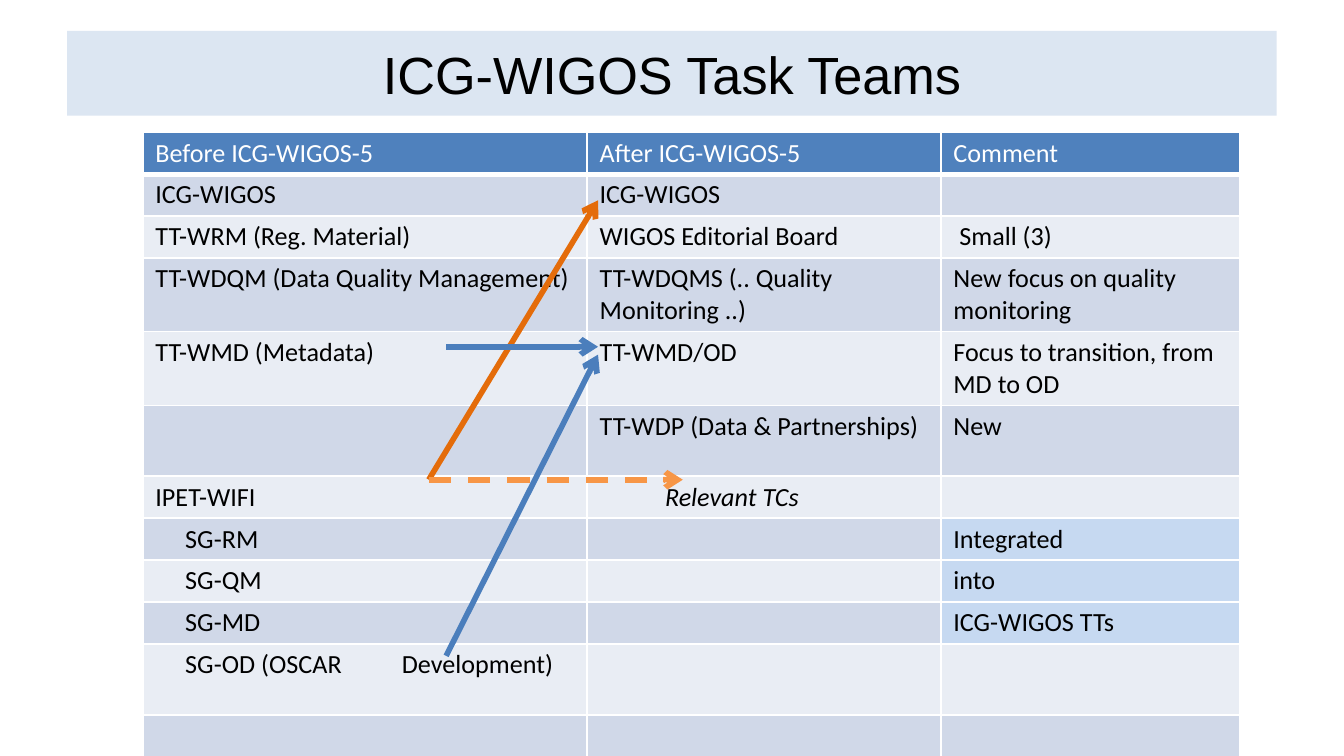
from dataclasses import dataclass

from lxml.etree import SubElement
from pptx import Presentation
from pptx.dml.color import RGBColor
from pptx.enum.dml import MSO_LINE
from pptx.enum.shapes import MSO_CONNECTOR
from pptx.enum.text import MSO_ANCHOR, MSO_AUTO_SIZE, PP_ALIGN
from pptx.oxml.ns import qn
from pptx.util import Pt


@dataclass(frozen=True)
class Theme:
    """Colours, fonts and type sizes of the slide."""
    title_font: str = "Arial"
    body_font: str = "Calibri"
    title_size: int = 28
    body_size: int = 14
    text: str = "000000"
    white: str = "FFFFFF"
    title_fill: str = "DCE6F2"
    header: str = "4F81BD"
    bands: tuple = ("D0D8E8", "E9EDF4")
    highlight: str = "C6D9F1"
    blue: str = "4B7EBC"
    orange: str = "E46C0A"
    light_orange: str = "F79646"


@dataclass(frozen=True)
class Cell:
    """Table cell text with its optional indent, tab stop, italics and fill."""
    text: str = ""
    indent: float = 0
    tab: float = 0
    italic: bool = False
    fill: str = ""


class Deck:
    """Theme and current slide, with a method for each kind of element."""

    def __init__(self, prs, theme):
        self.theme = theme
        self.s = prs.slides.add_slide(prs.slide_layouts[5])

    def style(self, p, size, color, font):
        """Set the type of a whole paragraph."""
        p.font.size = Pt(size)
        p.font.name = font
        p.font.color.rgb = RGBColor.from_string(color)

    def title(self, text, x, y, w, h):
        """Fill and format the title placeholder."""
        sp = self.s.shapes.title
        sp.left, sp.top, sp.width, sp.height = Pt(x), Pt(y), Pt(w), Pt(h)
        sp.fill.solid()
        sp.fill.fore_color.rgb = RGBColor.from_string(self.theme.title_fill)
        tf = sp.text_frame
        tf.text = text
        tf.auto_size = MSO_AUTO_SIZE.NONE
        tf.vertical_anchor = MSO_ANCHOR.MIDDLE
        p = tf.paragraphs[0]
        p.alignment = PP_ALIGN.CENTER
        self.style(p, self.theme.title_size, self.theme.text, self.theme.title_font)

    def borders(self, cell, bottom):
        """Draw white borders around a cell."""
        tc_pr = cell._tc.get_or_add_tcPr()
        for side, width in (("L", 1), ("R", 1), ("T", 1), ("B", bottom)):
            ln = SubElement(tc_pr, qn(f"a:ln{side}"), w=str(Pt(width)))
            fill = SubElement(ln, qn("a:solidFill"))
            SubElement(fill, qn("a:srgbClr"), val=self.theme.white)

    def cell(self, cell, item, fill, color, bottom):
        """Write and format one table cell."""
        cell.margin_left = cell.margin_right = Pt(6.75)
        cell.margin_top = cell.margin_bottom = Pt(2.7)
        self.borders(cell, bottom)
        cell.fill.solid()
        cell.fill.fore_color.rgb = RGBColor.from_string(fill)
        p = cell.text_frame.paragraphs[0]
        if item.text:
            p.text = item.text
        p_pr = p._p.get_or_add_pPr()
        if item.indent:
            p_pr.set("marL", str(Pt(item.indent)))
        if item.tab:
            tabs = SubElement(p_pr, qn("a:tabLst"))
            SubElement(tabs, qn("a:tab"), pos=str(Pt(item.tab)), algn="l")
        self.style(p, self.theme.body_size, color, self.theme.body_font)
        p.font.bold = False
        p.font.italic = item.italic

    def table(self, rows, x, y, widths, heights):
        """Add a table with a header row and banded body rows."""
        t = self.theme
        table = self.s.shapes.add_table(len(rows), len(widths), Pt(x), Pt(y),
                                        Pt(sum(widths)), Pt(sum(heights))).table
        table.horz_banding = False
        for column, width in zip(table.columns, widths):
            column.width = Pt(width)
        for i, (row, height) in enumerate(zip(rows, heights)):
            table.rows[i].height = Pt(height)
            band, color, bottom = (t.bands[(i - 1) % 2], t.text, 1) if i else (t.header, t.white, 3)
            for j, item in enumerate(row):
                item = item if isinstance(item, Cell) else Cell(item)
                self.cell(table.cell(i, j), item, item.fill or band, color, bottom)

    def arrow(self, start, end, color, dash=None):
        """Add a straight arrow between two points."""
        c = self.s.shapes.add_connector(MSO_CONNECTOR.STRAIGHT, *map(Pt, start + end))
        c.line.width = Pt(3)
        c.line.color.rgb = RGBColor.from_string(color)
        if dash:
            c.line.dash_style = dash
        SubElement(c.line._get_or_add_ln(), qn("a:tailEnd"), type="arrow")
        SubElement(c._element.spPr, qn("a:effectLst"))


def main():
    """Build the task team slide."""
    prs = Presentation()
    prs.slide_width, prs.slide_height = Pt(720), Pt(405)
    theme = Theme()
    deck = Deck(prs, theme)
    deck.title("ICG-WIGOS Task Teams", 36, 16.5, 648, 45.5)

    single, double, step = 21.6, 38, 16
    rows = [
        ("Before ICG-WIGOS-5", "After ICG-WIGOS-5", "Comment"),
        ("ICG-WIGOS", "ICG-WIGOS", ""),
        ("TT-WRM (Reg. Material)", "WIGOS Editorial Board", Cell("Small (3)", indent=3.2)),
        ("TT-WDQM (Data Quality Management)", "TT-WDQMS (.. Quality Monitoring ..)",
         "New focus on quality monitoring"),
        ("TT-WMD (Metadata)", "TT-WMD/OD", "Focus to transition, from MD to OD"),
        ("", "TT-WDP (Data & Partnerships)", "New"),
        ("IPET-WIFI", Cell("Relevant TCs", indent=35, italic=True), ""),
        (Cell("SG-RM", step), "", Cell("Integrated", fill=theme.highlight)),
        (Cell("SG-QM", step), "", Cell("into", fill=theme.highlight)),
        (Cell("SG-MD", step), "", Cell("ICG-WIGOS TTs", fill=theme.highlight)),
        (Cell("SG-OD (OSCAR\tDevelopment)", step, tab=116), "", ""),
        ("", "", ""),
    ]
    heights = [double if i in (3, 4, 5, 10) else single for i in range(len(rows))]
    deck.table(rows, 76.5, 70.8, (238, 189.5, 160), heights)

    wifi, metadata, development = (229.7, 257), (239, 185.8), (239, 351.4)
    after_x = 320.4
    deck.arrow(wifi, (after_x, 107.3), theme.orange)
    deck.arrow(metadata, (after_x, metadata[1]), theme.blue)
    deck.arrow(development, (after_x, 190), theme.blue)
    deck.arrow(wifi, (365.8, wifi[1]), theme.light_orange, MSO_LINE.DASH)
    prs.save("out.pptx")


if __name__ == "__main__":
    main()
